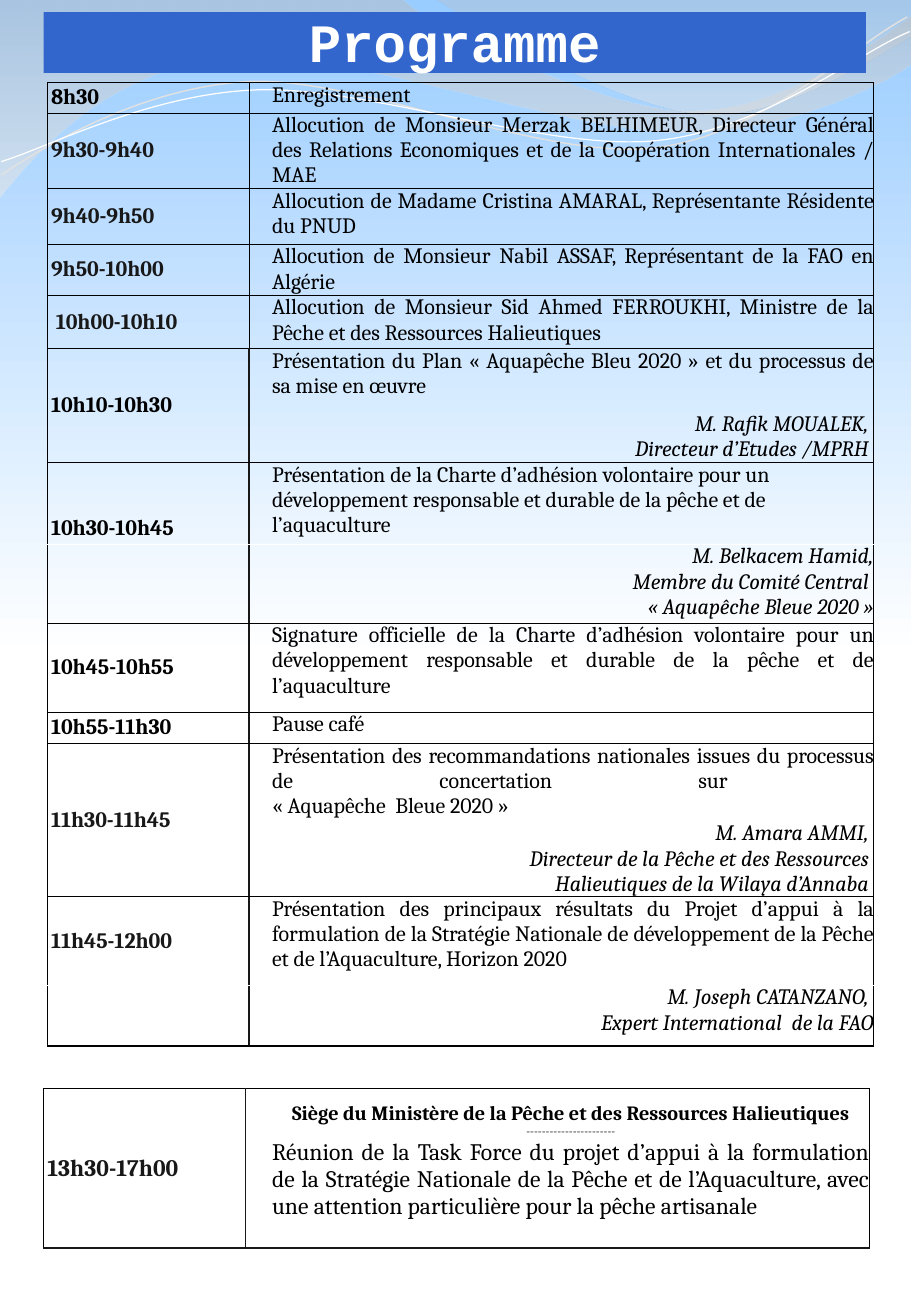
from lxml import etree
from pptx import Presentation
from pptx.dml.color import RGBColor
from pptx.enum.text import MSO_ANCHOR as Anchor, PP_ALIGN as Align
from pptx.oxml.ns import qn
from pptx.util import Inches, Pt

BLACK = RGBColor(0x00, 0x00, 0x00)
INK = RGBColor(0x18, 0x18, 0x18)
WHITE = RGBColor(0xFF, 0xFF, 0xFF)
BLUE = RGBColor(0x33, 0x66, 0xCC)
SKY = RGBColor(0x99, 0xCC, 0xFF)
GREY = RGBColor(0xBD, 0xBD, 0xBD)
MIST = RGBColor(0xE7, 0xE7, 0xE7)
PALE = RGBColor(0xE1, 0xE1, 0xE1)

# Border styles: colour and width in points
THIN, DARK, SOLID, PAUSE = (BLACK, 0.5), (INK, 1), (BLACK, 1), (WHITE, 1)

# Programme rows: height, time (None joins the cell above), paragraphs, style, border below
PROGRAMME = [
    (0.25, "8h30", ["Enregistrement"], "talk", THIN),
    (0.62, "9h30-9h40", ["Allocution de Monsieur Merzak BELHIMEUR, Directeur Général des "
     "Relations Economiques et de la Coopération Internationales / MAE"], "talk", THIN),
    (0.46, "9h40-9h50", ["Allocution de Madame Cristina AMARAL, Représentante Résidente du PNUD"],
     "talk", THIN),
    (0.42, "9h50-10h00", ["Allocution de Monsieur Nabil ASSAF, Représentant de la FAO en Algérie"],
     "talk", THIN),
    (0.44, " 10h00-10h10", ["Allocution de Monsieur Sid Ahmed FERROUKHI, Ministre de la Pêche et "
     "des Ressources Halieutiques "], "talk", THIN),
    (0.52, "10h10-10h30", ["Présentation du Plan « Aquapêche Bleu 2020 » et du processus de sa "
     "mise en œuvre  "], "talk", None),
    (0.42, None, ["M. Rafik MOUALEK, \nDirecteur d’Etudes /MPRH "], "speaker", THIN),
    (0.67, "10h30-10h45", ["Présentation de la Charte d’adhésion volontaire pour un développement "
     "responsable et durable de la pêche et de l’aquaculture"], "left", PAUSE),
    (0.65, "", ["M. Belkacem Hamid,", "Membre du Comité Central \n« Aquapêche Bleue 2020 »"],
     "speaker", THIN),
    (0.73, "10h45-10h55", ["Signature officielle de la Charte d’adhésion volontaire pour un "
     "développement responsable et durable de la pêche et de l’aquaculture"], "talk", THIN),
    (0.26, "10h55-11h30", ["Pause café"], "left", THIN),
    (0.64, "11h30-11h45", ["Présentation des recommandations nationales issues du processus de "
     "concertation sur \n« Aquapêche  Bleue 2020 »"], "talk", None),
    (0.62, None, ["M. Amara AMMI, \nDirecteur de la Pêche et des Ressources \n"
     "Halieutiques de la Wilaya d’Annaba "], "speaker", THIN),
    (0.73, "11h45-12h00", ["Présentation des principaux résultats du Projet d’appui à la "
     "formulation de la Stratégie Nationale de développement de la Pêche et de l’Aquaculture, "
     "Horizon 2020"], "talk", PAUSE),
    (0.5, "", ["M. Joseph CATANZANO, \nExpert International  de la FAO"], "speaker", SOLID),
]
BLACK_TIMES = {"8h30", "10h10-10h30", "10h30-10h45", "10h45-10h55", "10h55-11h30"}
FIRST_DARK_ROW = 5  # the column divider is heavier from here on

AFTERNOON_TIME = "13h30-17h00"
AFTERNOON = [
    ("Siège du Ministère de la Pêche et des Ressources Halieutiques", Align.CENTER,
     {"size": Pt(12), "bold": True}),
    ("-----------------------", Align.CENTER, {"size": Pt(7)}),
    ("Réunion de la Task Force du projet d’appui à la formulation de la Stratégie Nationale de "
     "la Pêche et de l’Aquaculture, avec une attention particulière pour la pêche artisanale",
     Align.JUSTIFY, {"size": Pt(14)}),
]
STYLES = {
    "talk": (Align.JUSTIFY, {"size": Pt(13)}),
    "left": (Align.LEFT, {"size": Pt(13)}),
    "speaker": (Align.RIGHT, {"size": Pt(13), "italic": True}),
}
COLUMNS = (1.66, 5.14)

# Waves: start point, then line ends (one point) and curves (three points)
WAVES = [
    ([(0, -0.01), [(3.3, -0.01)], [(3.57, 0.24), (4.98, 0.91), (5.69, 0.91)],
      [(6.4, 0.91), (7.19, 0.37), (7.5, 0.13)], [(7.51, 0.52)],
      [(7.38, 0.63), (6.52, 1.09), (5.59, 1.09)], [(4.66, 1.08), (2.86, 0.4), (1.93, 0.49)],
      [(0.97, 0.51), (0.34, 1.2), (-0.01, 1.63)]], [(0, GREY, 45), (100, MIST, 55)]),
    ([(3.59, -0.01), [(3.82, 0.16), (5.11, 0.89), (5.77, 0.94)],
      [(6.42, 1), (7.21, 0.46), (7.5, 0.3)], [(7.5, 0)]], [(0, GREY, 30), (80, PALE, 45)]),
]
STRANDS = [
    ([(0.01, 1.44), [(0.37, 1.2), (1.18, 0.71), (2.07, 0.67)],
      [(2.96, 0.64), (4.46, 1.31), (5.36, 1.22)], [(6.26, 1.13), (7.03, 0.37), (7.47, 0.14)]],
     PALE, 0.85),
    ([(0.01, 1.33), [(0.36, 1.23), (1.22, 0.77), (2.12, 0.74)],
      [(3.02, 0.71), (4.49, 1.24), (5.38, 1.16)], [(6.28, 1.08), (7.05, 0.44), (7.49, 0.26)]],
     WHITE, 0.75),
]


def set_gradient(owner, stops):
    """Turn the solid fill of an element into a vertical gradient."""
    gradient = etree.Element(qn("a:gradFill"), rotWithShape="1")
    stop_list = etree.SubElement(gradient, qn("a:gsLst"))
    for position, color, opacity in stops:
        stop = etree.SubElement(stop_list, qn("a:gs"), pos=str(position * 1000))
        tint = etree.SubElement(stop, qn("a:srgbClr"), val=str(color))
        if opacity < 100:
            etree.SubElement(tint, qn("a:alpha"), val=str(opacity * 1000))
    etree.SubElement(gradient, qn("a:lin"), ang="5400000", scaled="0")
    owner.replace(owner.find(qn("a:solidFill")), gradient)


def add_outline(slide, outline, close):
    """Draw the points as lines, then join each group of three into one curve."""
    start, *segments = outline
    builder = slide.shapes.build_freeform(Inches(start[0]), Inches(start[1]))
    points = [(Inches(x), Inches(y)) for segment in segments for x, y in segment]
    builder.add_line_segments(points, close=close)
    shape = builder.convert_to_shape()
    shape.shadow.inherit = False
    lines = iter(list(shape._element.iter(qn("a:lnTo"))))
    for segment in segments:
        group = [next(lines) for _ in segment]
        if len(group) == 3:
            curve = etree.Element(qn("a:cubicBezTo"))
            group[0].addprevious(curve)
            for line in group:
                curve.append(line[0])
                line.getparent().remove(line)
    return shape


def write(paragraph, text, align, font, color=BLACK, indent=0):
    paragraph.text = text
    paragraph.alignment = align
    paragraph._p.get_or_add_pPr().set("marL", str(Inches(indent)))
    for run in paragraph.runs:
        run.font.color.rgb = color
        for name, value in {"name": "Cambria", **font}.items():
            setattr(run.font, name, value)


def write_all(cell, entries, indent):
    frame = cell.text_frame
    for index, (text, align, font) in enumerate(entries):
        paragraph = frame.add_paragraph() if index else frame.paragraphs[0]
        write(paragraph, text, align, font, indent=indent)


def format_cell(cell, borders, anchor, left=0, top=0, bottom=0):
    """Borders come in the order left, right, top, bottom."""
    properties = cell._tc.get_or_add_tcPr()
    for side, border in zip("LRTB", borders):
        line = etree.SubElement(properties, qn(f"a:ln{side}"))
        if border:
            line.set("w", str(Pt(border[1])))
            fill = etree.SubElement(line, qn("a:solidFill"))
            etree.SubElement(fill, qn("a:srgbClr"), val=str(border[0]))
        else:
            etree.SubElement(line, qn("a:noFill"))
    cell.fill.background()
    cell.vertical_anchor = anchor
    cell.margin_left, cell.margin_right = Inches(left), 0
    cell.margin_top, cell.margin_bottom = Inches(top), Inches(bottom)


def add_grid(slide, left, top, heights, closing):
    """Add a table whose last row is one open cell below the closing border."""
    table = slide.shapes.add_table(len(heights), len(COLUMNS), Inches(left), Inches(top),
                                   Inches(sum(COLUMNS)), Inches(sum(heights))).table
    table.first_row = table.horz_banding = False
    for column, width in zip(table.columns, COLUMNS):
        column.width = Inches(width)
    for row, height in zip(table.rows, heights):
        row.height = Inches(height)
    first, second = table.rows[len(heights) - 1].cells
    for cell in (first, second):
        format_cell(cell, (None, None, closing, PAUSE), Anchor.TOP)
    first.merge(second)
    return table


presentation = Presentation()
presentation.slide_width, presentation.slide_height = Inches(7.5), Inches(10.83)
slide = presentation.slides.add_slide(presentation.slide_layouts[5])

# Background and waves
slide.background.fill.solid()
set_gradient(slide.element.find(".//" + qn("p:bgPr")),
             [(0, SKY, 100), (50, WHITE, 100), (100, WHITE, 100)])
for outline, stops in WAVES:
    wave = add_outline(slide, outline, True)
    wave.fill.solid()
    wave.line.fill.background()
    set_gradient(wave._element.spPr, stops)
for outline, color, width in STRANDS:
    strand = add_outline(slide, outline, False)
    strand.fill.background()
    strand.line.color.rgb = color
    strand.line.width = Pt(width)

# Morning table
table = add_grid(slide, 0.39, 0.68, [row[0] for row in PROGRAMME] + [0.34], SOLID)
above = THIN
for index, (height, time, texts, style, below) in enumerate(PROGRAMME):
    divider = DARK if index >= FIRST_DARK_ROW else THIN
    time_cell, text_cell = table.cell(index, 0), table.cell(index, 1)
    low = below == PAUSE and style == "left"
    format_cell(time_cell, (THIN, divider, above, below), Anchor.BOTTOM if low else Anchor.MIDDLE,
                left=0.03, bottom=0.03 if low else 0)
    format_cell(text_cell, (divider, THIN, above, below), Anchor.TOP)
    if time is None:
        table.cell(index - 1, 0).merge(time_cell)
    elif time:
        write(time_cell.text_frame.paragraphs[0], time, Align.LEFT,
              {"size": Pt(13), "bold": True}, BLACK if time in BLACK_TIMES else INK)
    write_all(text_cell, [(text, *STYLES[style]) for text in texts], 0.19)
    above = below

# Title band, in front of the waves
title = slide.shapes.title
slide.shapes._spTree.append(title._element)
title.left, title.top, title.width, title.height = map(Inches, (0.36, 0.1, 6.77, 0.5))
title.fill.solid()
title.fill.fore_color.rgb = BLUE
frame = title.text_frame
frame.vertical_anchor = Anchor.BOTTOM
frame.margin_left = frame.margin_right = frame.margin_bottom = 0
write(frame.paragraphs[0], "Programme", Align.CENTER,
      {"name": "Courier New", "size": Pt(32), "bold": True}, WHITE)

# Afternoon table
table = add_grid(slide, 0.36, 8.96, [1.31, 0.53], DARK)
time_cell, text_cell = table.cell(0, 0), table.cell(0, 1)
format_cell(time_cell, (THIN, DARK, THIN, DARK), Anchor.MIDDLE, left=0.03)
format_cell(text_cell, (DARK, THIN, THIN, DARK), Anchor.TOP, top=0.11)
write(time_cell.text_frame.paragraphs[0], AFTERNOON_TIME, Align.LEFT,
      {"size": Pt(14), "bold": True}, INK)
write_all(text_cell, AFTERNOON, 0.22)

presentation.save("out.pptx")
